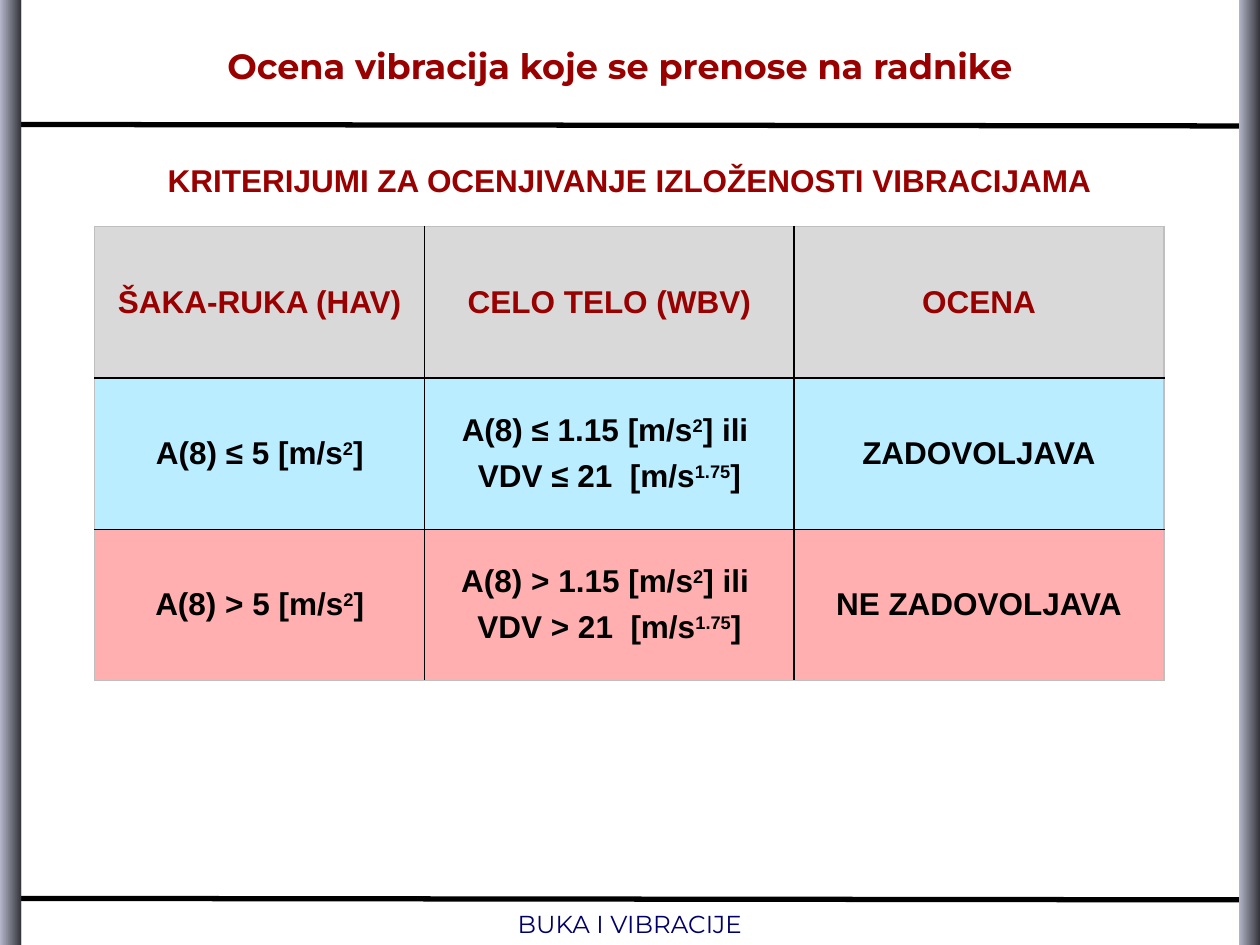
from lxml.etree import SubElement
from pptx import Presentation
from pptx.dml.color import RGBColor
from pptx.enum.shapes import MSO_CONNECTOR, MSO_SHAPE
from pptx.enum.text import MSO_ANCHOR, MSO_AUTO_SIZE, PP_ALIGN
from pptx.oxml.ns import qn
from pptx.util import Cm, Pt

SLIDE_WIDTH, SLIDE_HEIGHT = 25.4, 19.05
EDGE_WIDTH = 0.43
DARK_RED, NAVY, BLACK, GREY = "990000", "000066", "000000", "BFBFBF"
COLUMN_WIDTHS = (6.65, 7.45, 7.45)
ROW_HEIGHT = 3.05

# Text between ^ marks is superscript; each cell is a list of paragraphs.
CRITERIA = [
    ("D9D9D9", DARK_RED, [["ŠAKA-RUKA (HAV)"], ["CELO TELO (WBV)"], ["OCENA"]]),
    ("B9EDFF", BLACK, [["A(8) ≤ 5 [m/s^2^]"],
                       ["A(8) ≤ 1.15 [m/s^2^] ili ", "VDV ≤ 21  [m/s^1.75^]"],
                       ["ZADOVOLJAVA"]]),
    ("FFAFAF", BLACK, [["A(8) > 5 [m/s^2^]"],
                       ["A(8) > 1.15 [m/s^2^] ili ", "VDV > 21  [m/s^1.75^]"],
                       ["NE ZADOVOLJAVA"]]),
]


def color(hex_value):
    return RGBColor.from_string(hex_value)


def format_paragraph(paragraph, font_name, size, hex_value, bold=False):
    paragraph.alignment = PP_ALIGN.CENTER
    paragraph.font.name = font_name
    paragraph.font.size = Pt(size)
    paragraph.font.bold = bold
    paragraph.font.color.rgb = color(hex_value)


def write_line(shape, text, anchor, font_name, size, hex_value, bold=False):
    """Fill a shape with one centred paragraph and return that paragraph."""
    frame = shape.text_frame
    frame.text = text
    frame.word_wrap = True
    frame.auto_size = MSO_AUTO_SIZE.NONE
    frame.vertical_anchor = anchor
    paragraph = frame.paragraphs[0]
    format_paragraph(paragraph, font_name, size, hex_value, bold)
    return paragraph


def add_edge(slide, left, top, width, height):
    """Add a shaded vertical bar along one side of the slide."""
    edge = slide.shapes.add_shape(MSO_SHAPE.RECTANGLE, Cm(left), Cm(top), Cm(width), Cm(height))
    edge.shadow.inherit = False
    edge.line.fill.background()
    edge.fill.gradient()
    edge.fill.gradient_angle = 0
    for stop, shade in zip(edge.fill.gradient_stops, ("B5B7CB", "333439")):
        stop.color.rgb = color(shade)


def add_rule(slide, left, top, width, drop):
    rule = slide.shapes.add_connector(
        MSO_CONNECTOR.STRAIGHT, Cm(left), Cm(top), Cm(left + width), Cm(top + drop))
    rule.line.color.rgb = color(BLACK)
    rule.line.width = Pt(3)
    SubElement(rule._element.spPr, qn("a:effectLst"))


def add_title(slide, left, top, width, height):
    title = slide.shapes.title
    title.left, title.top, title.width, title.height = Cm(left), Cm(top), Cm(width), Cm(height)
    paragraph = write_line(title, "Ocena vibracija koje se prenose na radnike",
                           MSO_ANCHOR.MIDDLE, "Montserrat", 20, DARK_RED, bold=True)
    paragraph.space_after = Pt(6)


def add_subtitle(slide, left, top, width, height):
    subtitle = slide.shapes.add_textbox(Cm(left), Cm(top), Cm(width), Cm(height))
    paragraph = write_line(subtitle, "KRITERIJUMI ZA OCENJIVANJE IZLOŽENOSTI VIBRACIJAMA",
                           MSO_ANCHOR.TOP, "Arial", 18, DARK_RED, bold=True)
    paragraph.space_before = Pt(3.6)


def add_footer(slide, left, top, width, height):
    footer = slide.shapes.add_textbox(Cm(left), Cm(top), Cm(width), Cm(height))
    paragraph = write_line(footer, "BUKA I VIBRACIJE", MSO_ANCHOR.MIDDLE, "Montserrat", 14, NAVY)
    paragraph.space_after = Pt(6)


def set_borders(cell, side_colors):
    properties = cell._tc.get_or_add_tcPr()
    for side, hex_value in side_colors.items():
        border = SubElement(properties, qn(f"a:ln{side}"), w=str(Pt(1)))
        SubElement(SubElement(border, qn("a:solidFill")), qn("a:srgbClr"), val=hex_value)


def write_cell(cell, lines, hex_value):
    cell.vertical_anchor = MSO_ANCHOR.MIDDLE
    for number, line in enumerate(lines):
        frame = cell.text_frame
        paragraph = frame.add_paragraph() if number else frame.paragraphs[0]
        format_paragraph(paragraph, "Arial", 18, hex_value, bold=True)
        if number:
            paragraph.space_before = Pt(6)
        for part_number, part in enumerate(line.split("^")):
            run = paragraph.add_run()
            run.text = part
            if part_number % 2:
                run._r.get_or_add_rPr().set("baseline", "30000")


def add_criteria_table(slide, left, top):
    last_row, last_column = len(CRITERIA) - 1, len(COLUMN_WIDTHS) - 1
    table = slide.shapes.add_table(
        len(CRITERIA), len(COLUMN_WIDTHS), Cm(left), Cm(top),
        Cm(sum(COLUMN_WIDTHS)), Cm(ROW_HEIGHT * len(CRITERIA))).table
    for column, width in zip(table.columns, COLUMN_WIDTHS):
        column.width = Cm(width)
    for row_number, (fill, text_color, entries) in enumerate(CRITERIA):
        table.rows[row_number].height = Cm(ROW_HEIGHT)
        for column_number, lines in enumerate(entries):
            cell = table.cell(row_number, column_number)
            set_borders(cell, {
                "L": BLACK if column_number else GREY,
                "R": BLACK if column_number < last_column else GREY,
                "T": BLACK if row_number else GREY,
                "B": BLACK if row_number < last_row else GREY,
            })
            cell.fill.solid()
            cell.fill.fore_color.rgb = color(fill)
            write_cell(cell, lines, text_color)


def main():
    presentation = Presentation()
    presentation.slide_width, presentation.slide_height = Cm(SLIDE_WIDTH), Cm(SLIDE_HEIGHT)
    slide = presentation.slides.add_slide(presentation.slide_layouts[5])

    for rule_top in (18.11, 2.51):
        add_rule(slide, 0, rule_top, 25.35, 0.03)
    for edge_left in (0, SLIDE_WIDTH - EDGE_WIDTH):
        add_edge(slide, edge_left, 0, EDGE_WIDTH, SLIDE_HEIGHT)
    add_title(slide, 1.7, 0.13, 21.6, 2.39)
    add_subtitle(slide, 1.14, 3.12, 23.11, 1.22)
    add_criteria_table(slide, 1.91, 4.57)
    add_footer(slide, 0.5, 18.31, 24.4, 0.61)
    presentation.save("out.pptx")


if __name__ == "__main__":
    main()
